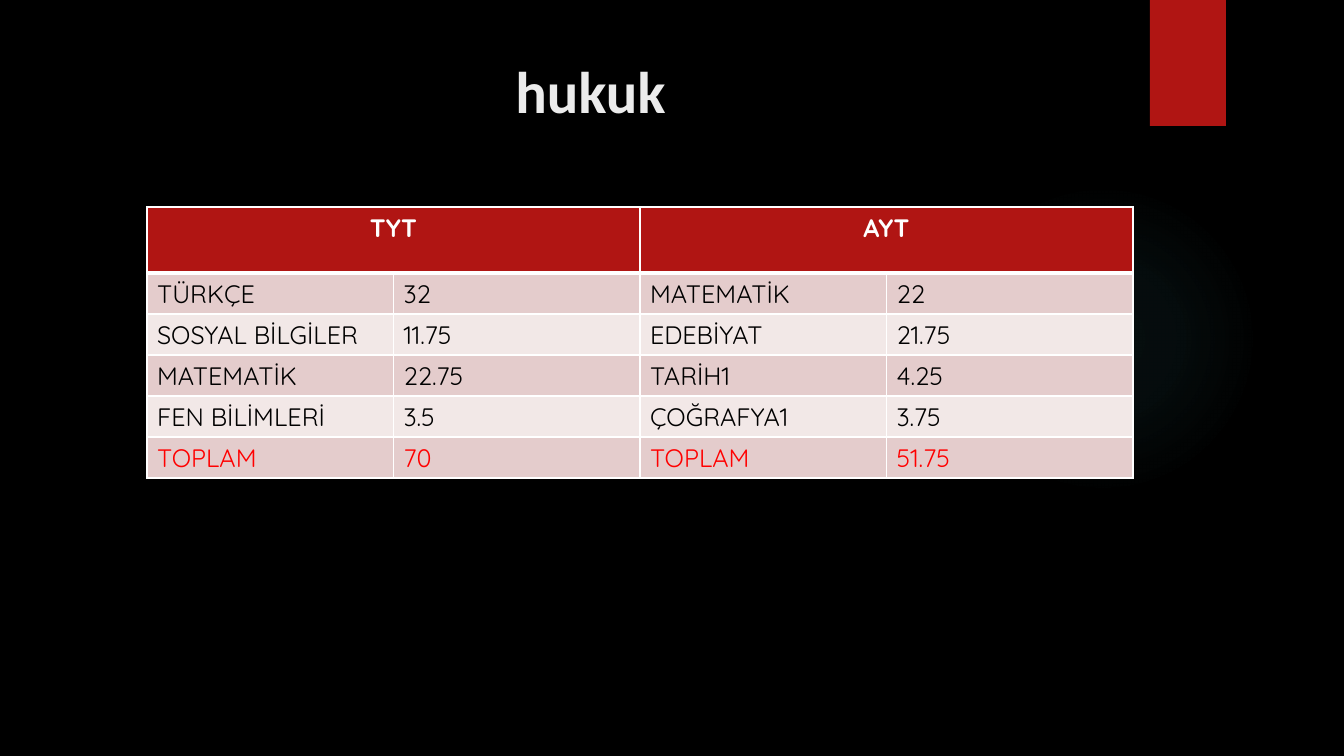
from dataclasses import dataclass
from typing import Any

from lxml.etree import SubElement
from pptx import Presentation
from pptx.dml.color import RGBColor
from pptx.enum.shapes import MSO_SHAPE
from pptx.enum.text import MSO_ANCHOR, PP_ALIGN
from pptx.oxml.ns import qn
from pptx.util import Emu, Pt

SCALE = 12192000 / 1344


@dataclass(frozen=True)
class Theme:
    """Colours, fonts and type sizes of the slide."""

    background: str = "000000"
    accent: str = "B01513"
    glow: str = "50B9C1"
    title: str = "EBEBEB"
    light: str = "FFFFFF"
    dark: str = "000000"
    total: str = "FF0000"
    bands: tuple[str, str] = ("E4CCCC", "F2E8E7")
    title_font: str = "Calibri"
    table_font: str = "Quicksand"
    title_size: int = 42
    table_size: int = 18


@dataclass(frozen=True)
class Box:
    """A rectangle in px."""

    left: int
    top: int
    width: int
    height: int

    def emu(self) -> tuple[Emu, Emu, Emu, Emu]:
        """Return the four lengths in EMU."""
        return px(self.left), px(self.top), px(self.width), px(self.height)


@dataclass(frozen=True)
class Exam:
    """An exam with its subject scores, the total last."""

    name: str
    scores: tuple[tuple[str, str], ...]


THEME = Theme()
GLOW_BOX = Box(948, 184, 310, 310)
RIBBON_BOX = Box(1150, 0, 76, 126)
TITLE_BOX = Box(72, 50, 1037, 154)
TABLE_BOX = Box(147, 207, 986, 271)
HEADER_HEIGHT = 66
ROW_HEIGHT = 41
GLOW_STOPS = ((0, 7), (36, 6), (69, 0))
EXAMS = (
    Exam("TYT", (("TÜRKÇE", "32"), ("SOSYAL BİLGİLER", "11.75"),
                 ("MATEMATİK", "22.75"), ("FEN BİLİMLERİ", "3.5"), ("TOPLAM", "70"))),
    Exam("AYT", (("MATEMATİK", "22"), ("EDEBİYAT", "21.75"),
                 ("TARİH1", "4.25"), ("ÇOĞRAFYA1", "3.75"), ("TOPLAM", "51.75"))),
)


def px(length: int) -> Emu:
    """Turn px into EMU."""
    return Emu(round(length * SCALE))


def add_block(page: Any, kind: MSO_SHAPE, box: Box, color: str) -> Any:
    """Draw a plain filled shape without line or shadow."""
    shape = page.shapes.add_shape(kind, *box.emu())
    shape.shadow.inherit = False
    shape.line.fill.background()
    shape.fill.solid()
    shape.fill.fore_color.rgb = RGBColor.from_string(color)
    return shape


def add_color(parent: Any, color: str) -> Any:
    """Append an RGB colour element."""
    return SubElement(parent, qn("a:srgbClr"), val=color)


def add_glow(page: Any) -> None:
    """Draw the faint radial glow."""
    shape = add_block(page, MSO_SHAPE.OVAL, GLOW_BOX, THEME.glow)
    properties = shape.fill._xPr
    solid = properties.find(qn("a:solidFill"))
    gradient = SubElement(properties, qn("a:gradFill"), rotWithShape="1")
    properties.replace(solid, gradient)
    stops = SubElement(gradient, qn("a:gsLst"))
    for position, opacity in GLOW_STOPS:
        stop = SubElement(stops, qn("a:gs"), pos=str(position * 1000))
        SubElement(add_color(stop, THEME.glow), qn("a:alpha"), val=str(opacity * 1000))
    circle = SubElement(gradient, qn("a:path"), {"path": "circle"})
    SubElement(circle, qn("a:fillToRect"), {side: "50000" for side in "ltrb"})


def write(frame: Any, text: str, color: str, align: PP_ALIGN, **formats: Any) -> None:
    """Put one formatted span of text into a frame."""
    para = frame.paragraphs[0]
    para.alignment = align
    span = para.add_run()
    span.text = text
    span.font.color.rgb = RGBColor.from_string(color)
    for name, value in formats.items():
        setattr(span.font, name, value)


def add_title(page: Any, text: str) -> None:
    """Draw the slide title."""
    frame = page.shapes.add_textbox(*TITLE_BOX.emu()).text_frame
    frame.word_wrap = True
    frame.vertical_anchor = MSO_ANCHOR.TOP
    write(frame, text, THEME.title, PP_ALIGN.CENTER,
          name=THEME.title_font, size=Pt(THEME.title_size), bold=True)


def style_cell(cell: Any, fill: str, widths: dict[str, int]) -> None:
    """Give a cell its borders and fill."""
    properties = cell._tc.get_or_add_tcPr()
    for side, width in widths.items():
        line = SubElement(properties, qn(f"a:ln{side}"), w=str(Pt(width)))
        add_color(SubElement(line, qn("a:solidFill")), THEME.light)
    cell.fill.solid()
    cell.fill.fore_color.rgb = RGBColor.from_string(fill)


def add_scores(page: Any, exams: tuple[Exam, ...]) -> None:
    """Draw the table with one pair of columns for each exam."""
    count = len(exams[0].scores)
    table = page.shapes.add_table(count + 1, 2 * len(exams), *TABLE_BOX.emu()).table
    for index, row in enumerate(table.rows):
        row.height = px(ROW_HEIGHT if index else HEADER_HEIGHT)
        fill = THEME.bands[(index - 1) % 2] if index else THEME.accent
        widths = {"L": 1, "R": 1, "T": 3 if index == 1 else 1, "B": 1 if index else 3}
        for cell in row.cells:
            style_cell(cell, fill, widths)
    font = {"name": THEME.table_font, "size": Pt(THEME.table_size)}
    for number, exam in enumerate(exams):
        column = 2 * number
        header = table.cell(0, column)
        header.merge(table.cell(0, column + 1))
        write(header.text_frame, exam.name, THEME.light, PP_ALIGN.CENTER, bold=True, **font)
        for row_number, score in enumerate(exam.scores, 1):
            color = THEME.total if row_number == count else THEME.dark
            for offset, text in enumerate(score):
                frame = table.cell(row_number, column + offset).text_frame
                write(frame, text, color, PP_ALIGN.LEFT, bold=False, **font)


def main() -> None:
    """Build and save the deck."""
    deck = Presentation()
    deck.slide_width, deck.slide_height = px(1344), px(756)
    page = deck.slides.add_slide(deck.slide_layouts[6])
    page.background.fill.solid()
    page.background.fill.fore_color.rgb = RGBColor.from_string(THEME.background)
    add_glow(page)
    add_block(page, MSO_SHAPE.RECTANGLE, RIBBON_BOX, THEME.accent)
    add_title(page, "hukuk")
    add_scores(page, EXAMS)
    deck.save("out.pptx")


if __name__ == "__main__":
    main()
